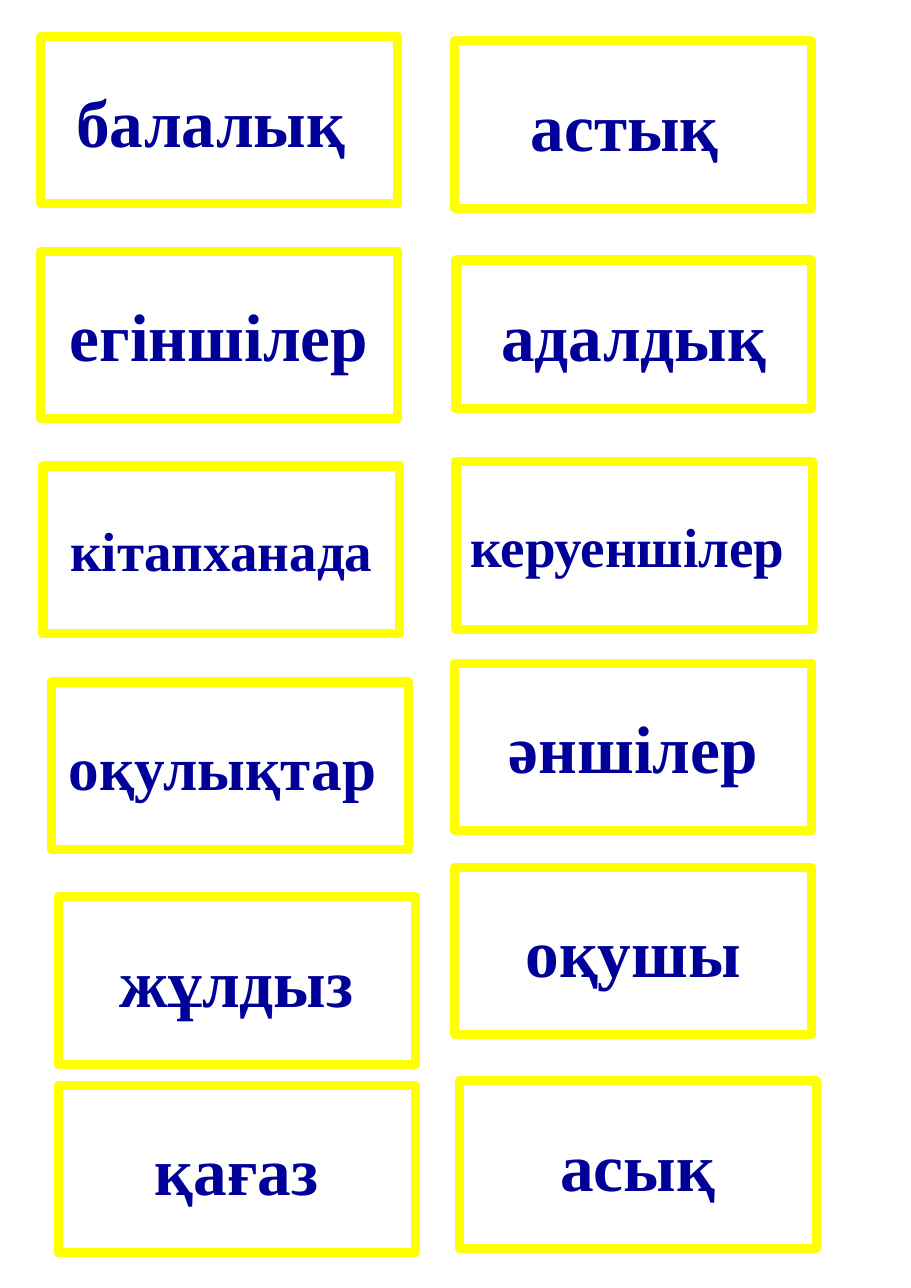
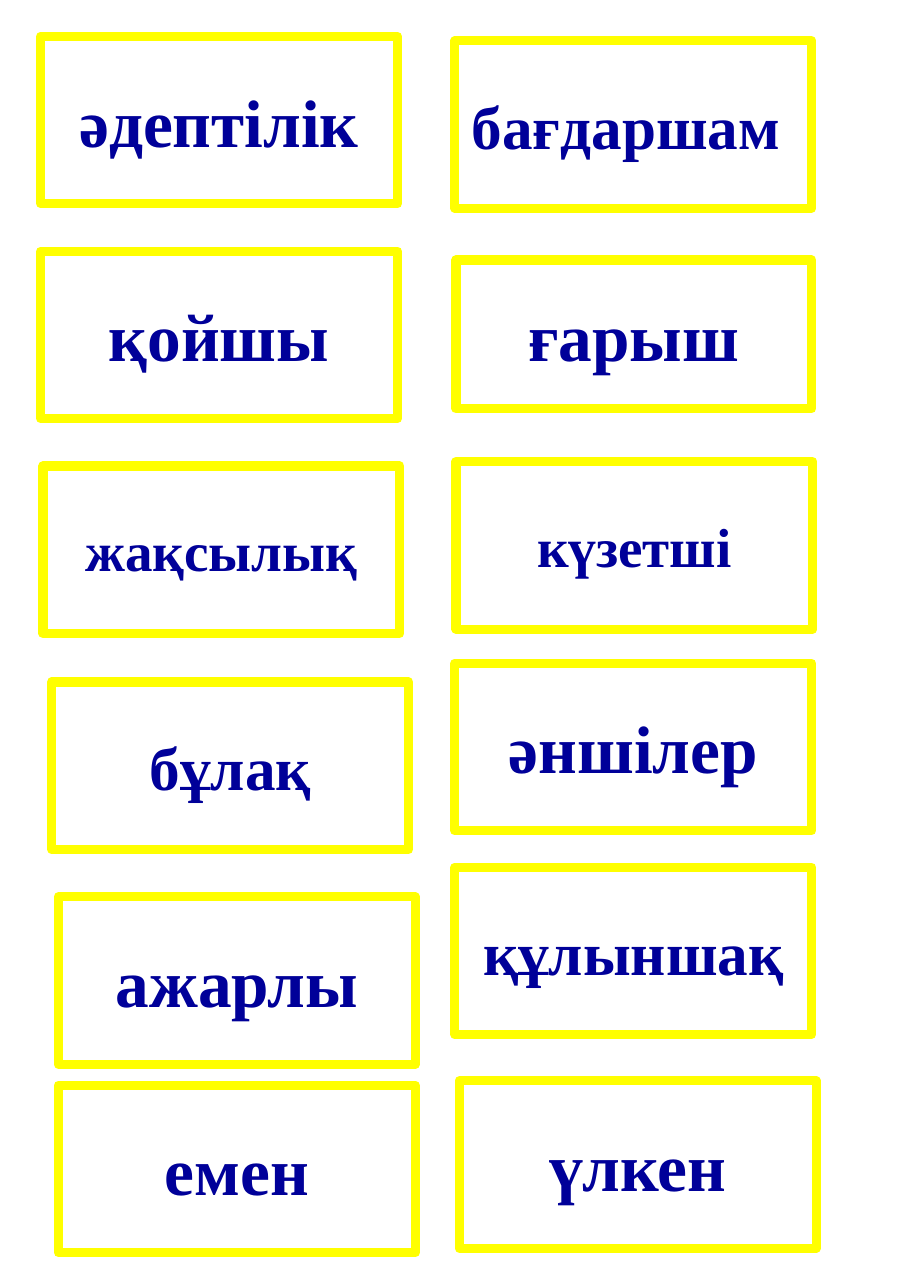
"""Builds two sheets of word cards, twelve framed words on each."""
from pptx import Presentation
from pptx.dml.color import RGBColor
from pptx.enum.shapes import MSO_SHAPE
from pptx.enum.text import MSO_ANCHOR, PP_ALIGN
from pptx.util import Inches, Pt

RECT = MSO_SHAPE.RECTANGLE
MIDDLE = MSO_ANCHOR.MIDDLE
CENTER = PP_ALIGN.CENTER

THEME = {
    "font": "Times New Roman",
    "ink": RGBColor(0x00, 0x00, 0x99),
    "frame": RGBColor(0xFF, 0xFF, 0x00),
    "paper": RGBColor(0xFF, 0xFF, 0xFF),
    "frame_width": 6,
    "large": 44,
    "medium": 40,
    "small": 36,
}

PAGE = (8.27, 11.69)
CARD = (3.24, 1.52)
LOW_CARD = (3.23, 1.35)

SLOTS = [
    (0.37, 0.33, CARD), (4.13, 0.37, CARD),
    (0.37, 2.28, CARD), (4.14, 2.36, LOW_CARD),
    (0.39, 4.23, CARD), (4.14, 4.19, CARD),
    (0.47, 6.19, CARD), (4.13, 6.02, CARD),
    (0.53, 8.14, CARD), (4.13, 7.87, CARD),
    (0.53, 9.85, CARD), (4.17, 9.81, CARD),
]

SHEETS = [
    [
        ("балалық ", "large"), ("астық ", "large"),
        ("егіншілер", "large"), ("адалдық", "large"),
        ("кітапханада", "small"), ("керуеншілер ", "small"),
        ("оқулықтар ", "medium"), ("әншілер", "large"),
        ("жұлдыз", "large"), ("оқушы", "large"),
        ("қағаз", "large"), ("асық", "large"),
    ],
    [
        ("әдептілік", "large"), ("бағдаршам ", "medium"),
        ("қойшы", "large"), ("ғарыш", "large"),
        ("жақсылық", "small"), ("күзетші", "small"),
        ("бұлақ", "medium"), ("әншілер", "large"),
        ("ажарлы", "large"), ("құлыншақ", "medium"),
        ("емен", "large"), ("үлкен", "large"),
    ],
]


def write(tf, text, size, color=THEME["ink"], bold=True, align=CENTER):
    tf.word_wrap = True
    tf.vertical_anchor = MIDDLE
    p = tf.paragraphs[0]
    p.alignment = align
    r = p.add_run()
    r.text = text
    r.font.name = THEME["font"]
    r.font.size = Pt(size)
    r.font.bold = bold
    r.font.color.rgb = color


def add_card(s, slot, word, size):
    left, top, (width, height) = slot
    sp = s.shapes.add_shape(RECT, Inches(left), Inches(top), Inches(width), Inches(height))
    sp.shadow.inherit = False
    sp.fill.solid()
    sp.fill.fore_color.rgb = THEME["paper"]
    sp.line.color.rgb = THEME["frame"]
    sp.line.width = Pt(THEME["frame_width"])
    write(sp.text_frame, word, THEME[size])


def main():
    prs = Presentation()
    prs.slide_width, prs.slide_height = (Inches(side) for side in PAGE)
    blank = prs.slide_layouts.get_by_name("Blank")
    for words in SHEETS:
        s = prs.slides.add_slide(blank)
        for slot, (word, size) in zip(SLOTS, words):
            add_card(s, slot, word, size)
    prs.save("out.pptx")


if __name__ == "__main__":
    main()
